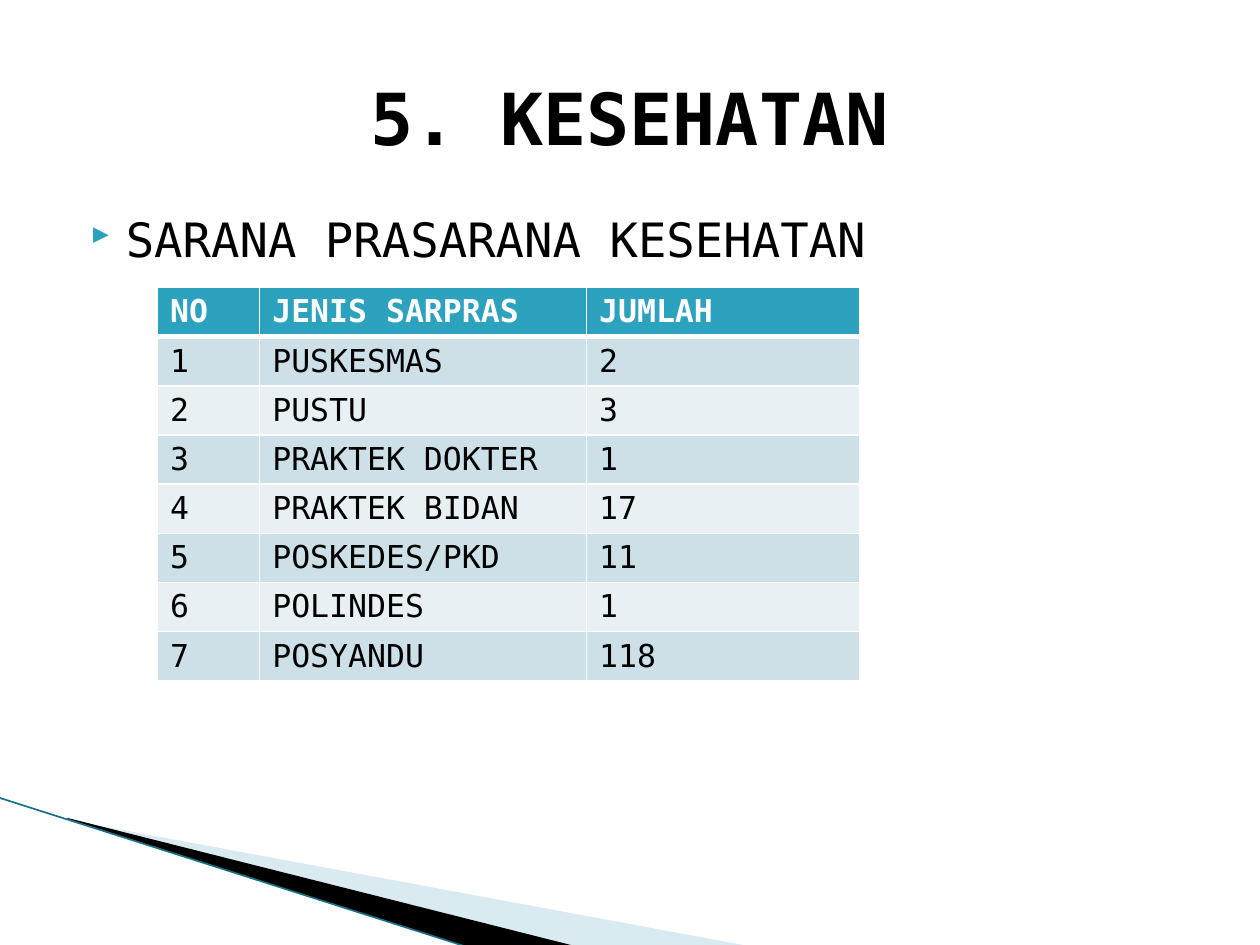
from lxml.etree import SubElement
from pptx import Presentation
from pptx.dml.color import RGBColor
from pptx.enum.shapes import MSO_CONNECTOR
from pptx.enum.text import MSO_ANCHOR, PP_ALIGN
from pptx.oxml import parse_xml
from pptx.oxml.ns import nsdecls, qn
from pptx.util import Pt

COLORS = {
    "text": "000000",
    "white": "FFFFFF",
    "accent": "2DA2BF",
    "band_dark": "CDE0E8",
    "band_light": "E8F0F4",
    "pale_wedge": "A0CBDC",
    "edge": "1A7186",
}
FONT = "DejaVu Sans Mono"
ROWS = [
    ("NO", "JENIS SARPRAS", "JUMLAH"),
    ("1", "PUSKESMAS", "2"),
    ("2", "PUSTU", "3"),
    ("3", "PRAKTEK DOKTER", "1"),
    ("4", "PRAKTEK BIDAN", "17"),
    ("5", "POSKEDES/PKD", "11"),
    ("6", "POLINDES", "1"),
    ("7", "POSYANDU", "118"),
]
COLUMN_WIDTHS = (58.4, 186.8, 156)
ROW_HEIGHT = 28.1
WEDGES = [
    ("pale_wedge", 40, (56.2, 393.8, 299.5, 113.8),
     [(39.6, 468.7), (428.4, 540.7), (328.3, 540.7), (39.6, 468)]),
    ("text", 100, (-4.3, 455.8, 299.5, 66.2),
     [(38.2, 467.3), (329, 540.7), (267.8, 541.4), (38.9, 468)]),
]


def rgb(name):
    return RGBColor.from_string(COLORS[name])


def style_text(paragraph, size, color="text", bold=False):
    for run in paragraph.runs:
        run.font.name = FONT
        run.font.size = Pt(size)
        run.font.bold = bold
        run.font.color.rgb = rgb(color)


prs = Presentation()
prs.slide_width, prs.slide_height = Pt(720), Pt(540)
slide = prs.slides.add_slide(prs.slide_layouts[6])
shapes = slide.shapes

for color, opacity, frame, points in WEDGES:
    start, *others = [(Pt(x), Pt(y)) for x, y in points]
    builder = shapes.build_freeform(*start, scale=1.0)
    builder.add_line_segments(others, close=True)
    wedge = builder.convert_to_shape()
    left, top, width, height = [Pt(length) for length in frame]
    shift_x, shift_y = wedge.left - left, wedge.top - top
    for point in wedge._element.iter(qn("a:pt")):
        point.set("x", str(int(point.get("x")) + shift_x))
        point.set("y", str(int(point.get("y")) + shift_y))
    for outline in wedge._element.iter(qn("a:path")):
        outline.set("w", str(width))
        outline.set("h", str(height))
    wedge.left, wedge.top, wedge.width, wedge.height = left, top, width, height
    wedge.shadow.inherit = False
    wedge.fill.solid()
    wedge.fill.fore_color.rgb = rgb(color)
    wedge.line.fill.background()
    if opacity < 100:
        fill_color = wedge.fill._xPr.find(qn("a:solidFill"))[0]
        SubElement(fill_color, qn("a:alpha")).set("val", str(opacity * 1000))

edge = shapes.add_connector(
    MSO_CONNECTOR.STRAIGHT, Pt(-0.7), Pt(455.8), Pt(267.8), Pt(541.4)
)
edge.line.color.rgb = rgb("edge")
edge.line.width = Pt(0.95)
SubElement(edge._element.spPr, qn("a:effectLst"))

body = shapes.add_textbox(Pt(36), Pt(116.6), Pt(648), Pt(356.4)).text_frame
body.word_wrap = True
heading = body.paragraphs[0]
heading.text = "SARANA PRASARANA KESEHATAN"
heading_props = heading._p.get_or_add_pPr()
heading_props.set("marL", str(Pt(28.8)))
heading_props.set("indent", str(Pt(-20.16)))
for bullet_xml in (
    f'<a:buClr {nsdecls("a")}><a:srgbClr val="{COLORS["accent"]}"/></a:buClr>',
    f'<a:buSzPct {nsdecls("a")} val="68000"/>',
    f'<a:buFont {nsdecls("a")} typeface="Wingdings 3" charset="2"/>',
    f'<a:buChar {nsdecls("a")} char="}}"/>',
):
    heading_props.append(parse_xml(bullet_xml))
style_text(heading, 27)

title = shapes.add_textbox(Pt(36), Pt(21.6), Pt(648), Pt(90)).text_frame
title.word_wrap = True
title.vertical_anchor = MSO_ANCHOR.MIDDLE
title.text = "5. KESEHATAN"
title.paragraphs[0].alignment = PP_ALIGN.CENTER
style_text(title.paragraphs[0], 41, bold=True)

facilities = shapes.add_table(
    len(ROWS), len(COLUMN_WIDTHS), Pt(90), Pt(164.3),
    Pt(sum(COLUMN_WIDTHS)), Pt(ROW_HEIGHT * len(ROWS)),
).table
for column, width in zip(facilities.columns, COLUMN_WIDTHS):
    column.width = Pt(width)

for r, values in enumerate(ROWS):
    facilities.rows[r].height = Pt(ROW_HEIGHT)
    is_header = r == 0
    band = "accent" if is_header else "band_dark" if r % 2 else "band_light"
    for c, value in enumerate(values):
        cell = facilities.cell(r, c)
        cell.text = value
        cell.margin_bottom = Pt(2.6)
        style_text(
            cell.text_frame.paragraphs[0], 18,
            "white" if is_header else "text", is_header,
        )
        cell_props = cell._tc.get_or_add_tcPr()
        for side in ("lnL", "lnR", "lnT", "lnB"):
            heavy = (r, side) in ((0, "lnB"), (1, "lnT"))
            cell_props.append(parse_xml(
                f'<a:{side} {nsdecls("a")} w="{Pt(3 if heavy else 1)}"><a:solidFill>'
                f'<a:srgbClr val="{COLORS["white"]}"/></a:solidFill></a:{side}>'
            ))
        cell.fill.solid()
        cell.fill.fore_color.rgb = rgb(band)

prs.save("out.pptx")
